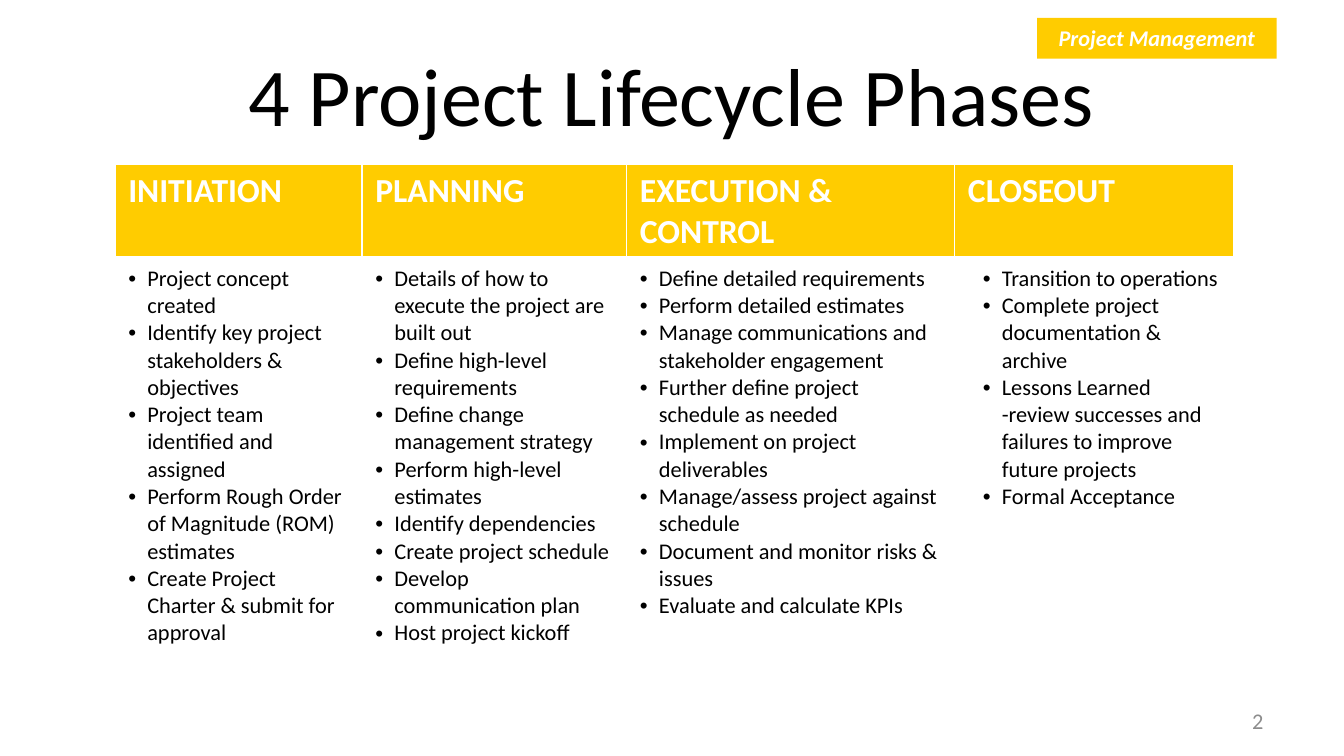
from lxml.etree import SubElement
from pptx import Presentation
from pptx.dml.color import RGBColor
from pptx.enum.shapes import MSO_SHAPE
from pptx.enum.text import MSO_ANCHOR, MSO_AUTO_SIZE, PP_ALIGN
from pptx.oxml.ns import qn
from pptx.util import Cm, Pt

GOLD = RGBColor(0xFF, 0xCC, 0x00)
WHITE = RGBColor(0xFF, 0xFF, 0xFF)
BLACK = RGBColor(0x00, 0x00, 0x00)
GRAY = RGBColor(0x8C, 0x8C, 0x8C)

TITLE = {"size": Pt(44), "color": BLACK}
HEAD = {"size": Pt(18), "bold": True, "color": WHITE}
BODY = {"size": Pt(12), "bold": False, "color": BLACK}
PAGE = {"size": Pt(12), "color": GRAY}
TAG = {"size": Pt(12), "bold": True, "italic": True, "color": WHITE}

PHASES = [
    ("INITIATION", 4.67, 0, [
        "Project concept created",
        "Identify key project stakeholders & objectives",
        "Project team identified and assigned",
        "Perform Rough Order of Magnitude (ROM) estimates",
        "Create Project Charter & submit for approval",
    ]),
    ("PLANNING", 5, 0, [
        "Details of how to execute the project are built out",
        "Define high-level requirements",
        "Define change management strategy",
        "Perform high-level estimates",
        "Identify dependencies",
        "Create project schedule",
        "Develop communication plan",
        "Host project kickoff",
    ]),
    ("EXECUTION & CONTROL", 6.2, 0, [
        "Define detailed requirements",
        "Perform detailed estimates",
        "Manage communications and stakeholder engagement",
        "Further define project schedule as needed",
        "Implement on project deliverables",
        "Manage/assess project against schedule",
        "Document and monitor risks & issues",
        "Evaluate and calculate KPIs",
    ]),
    ("CLOSEOUT", 5.28, 1, [
        "Transition to operations",
        "Complete project documentation & archive",
        "Lessons Learned\n-review successes and failures to improve future projects",
        "Formal Acceptance",
    ]),
]


def write(para, text, style):
    para.text = text
    for run in para.runs:
        run.font.name = "Calibri"
        for name, value in style.items():
            if name == "color":
                run.font.color.rgb = value
            else:
                setattr(run.font, name, value)


def fill_text(frame, text, style, align):
    frame.word_wrap = True
    para = frame.paragraphs[0]
    para.alignment = align
    write(para, text, style)


def add_text(slide, box, text, style, align):
    frame = slide.shapes.add_textbox(*map(Cm, box)).text_frame
    frame.vertical_anchor = MSO_ANCHOR.MIDDLE
    fill_text(frame, text, style, align)


def add_tag(slide, box, text):
    tag = slide.shapes.add_shape(MSO_SHAPE.RECTANGLE, *map(Cm, box))
    tag.shadow.inherit = False
    tag.fill.solid()
    tag.fill.fore_color.rgb = GOLD
    tag.line.fill.background()
    frame = tag.text_frame
    frame.vertical_anchor = MSO_ANCHOR.TOP
    frame.auto_size = MSO_AUTO_SIZE.SHAPE_TO_FIT_TEXT
    fill_text(frame, text, TAG, PP_ALIGN.CENTER)


def add_edges(cell, base):
    props = cell._tc.get_or_add_tcPr()
    for side, width in {"L": 1, "R": 1, "T": 1, "B": base}.items():
        line = SubElement(props, qn(f"a:ln{side}"), w=str(Pt(width)))
        fill = SubElement(line, qn("a:solidFill"))
        SubElement(fill, qn("a:srgbClr"), val=str(WHITE))


def add_bullet(para, level):
    para.level = level
    props = para._p.get_or_add_pPr()
    props.set("marL", str(Cm(0.64 if level else 0.36)))
    props.set("indent", str(Cm(-0.36)))
    SubElement(props, qn("a:buFont"), typeface="Arial")
    SubElement(props, qn("a:buChar"), char="•")


def add_phases(slide, box):
    frame = slide.shapes.add_table(2, len(PHASES), *map(Cm, box))
    table = frame.table
    table.horz_banding = False
    for row, height in zip(table.rows, (1.75, 6.68)):
        row.height = Cm(height)
    for col, (name, width, level, items) in enumerate(PHASES):
        table.columns[col].width = Cm(width)
        head, body = table.cell(0, col), table.cell(1, col)
        add_edges(head, 3)
        head.fill.solid()
        head.fill.fore_color.rgb = GOLD
        write(head.text_frame.paragraphs[0], name, HEAD)
        add_edges(body, 1)
        body.fill.background()
        text = body.text_frame
        for index, item in enumerate(items):
            para = text.add_paragraph() if index else text.paragraphs[0]
            add_bullet(para, level)
            write(para, item, BODY)
    frame.height = Cm(box[3])


def main():
    deck = Presentation()
    deck.slide_width, deck.slide_height = Cm(25.4), Cm(14.29)
    slide = deck.slides.add_slide(deck.slide_layouts[6])
    add_text(slide, (1.27, 0.58, 22.86, 2.39), "4 Project Lifecycle Phases",
             TITLE, PP_ALIGN.CENTER)
    add_phases(slide, (2.17, 3.1, 21.15, 9.65))
    add_text(slide, (18.2, 13.24, 5.93, 0.76), "2", PAGE, PP_ALIGN.RIGHT)
    add_tag(slide, (19.6, 0.34, 4.53, 0.77), "Project Management")
    deck.save("out.pptx")


if __name__ == "__main__":
    main()
